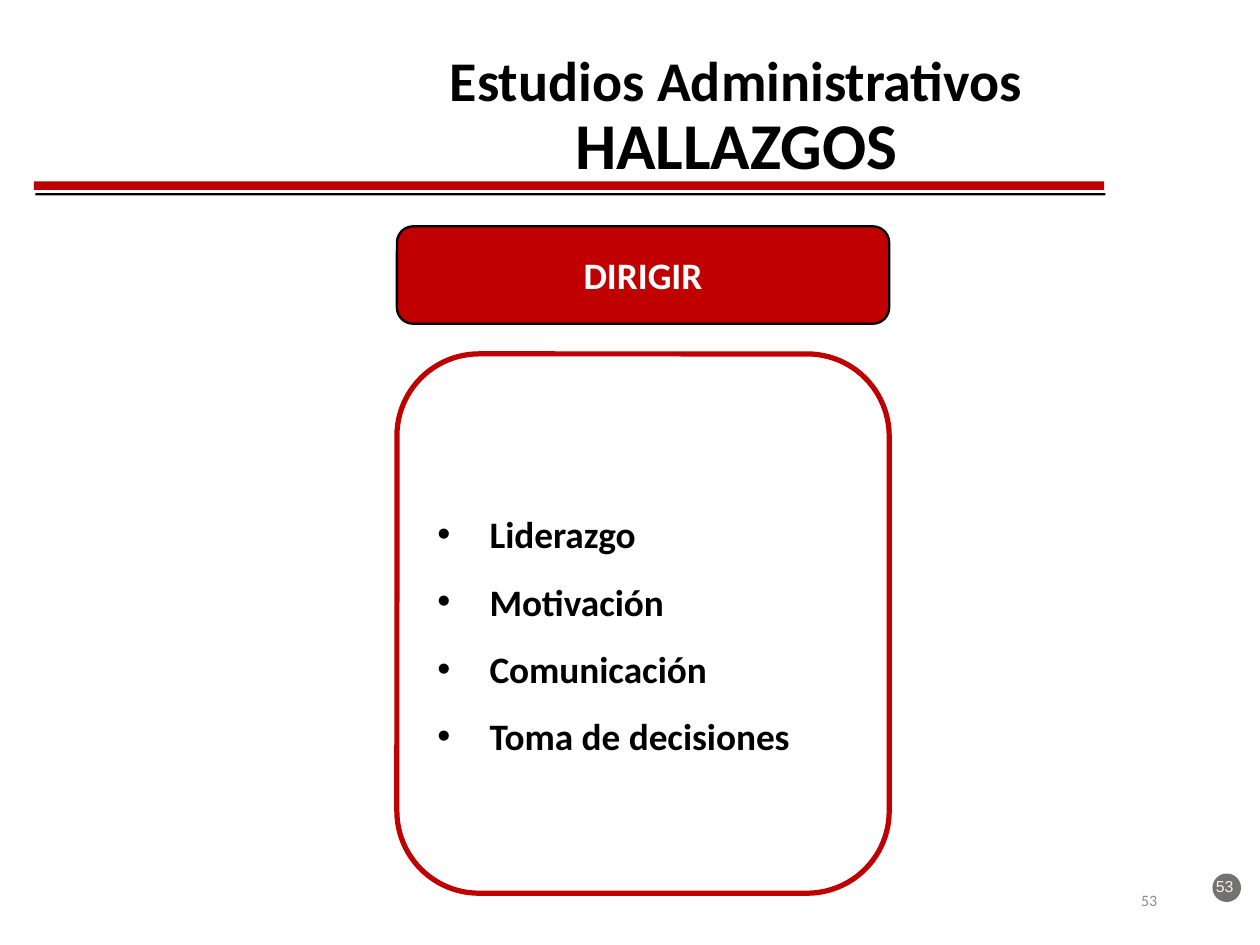
import pptx
import pptx.util
import pptx.dml.color
import pptx.enum.shapes
import pptx.enum.text
import pptx.oxml.xmlchemy
from dataclasses import dataclass

# Content
TITLE = [("Estudios Administrativos", 24), ("HALLAZGOS", 28)]
HEAD = "DIRIGIR"
ITEMS = ["Liderazgo", "Motivación", "Comunicación", "Toma de decisiones"]
PAGE = "53"


@dataclass
class Theme:
    font: str = "Calibri"
    alt: str = "Arial"
    red: str = "C00000"
    black: str = "000000"
    white: str = "FFFFFF"
    disc: str = "767171"
    pale: str = "F2F2F2"
    gray: str = "8C8C8C"
    text: float = 16
    small: float = 6.8


T = Theme()
WIDE = 7.5
HIGH = WIDE * 3 / 4

# Places: left, top, width, height in percent of the slide
COL, SPAN = 31.5, 39.07
SPOTS = {
    "disc": (96.23, 92.44, 2.27, 3.02),
    "badge": (95.2, 92.27, 4, 3.02),
    "title": (23.69, 2.84, 69.47, 19.38),
    "page": (70.63, 92.62, 22.53, 5.33),
    "head": (COL, 23.95, SPAN, 10.31),
    "list": (COL, 37.46, SPAN, 57.07),
}
RULES = [((2.7, 19.2, 84.93, 0.89), T.red),
         ((2.8, 20.44, 84.93, 0.25), T.black)]

KIND = pptx.enum.shapes.MSO_SHAPE
ALIGN = pptx.enum.text.PP_ALIGN
MID = pptx.enum.text.MSO_ANCHOR.MIDDLE
Inch = pptx.util.Inches


def place(spot):
    size = (WIDE, HIGH, WIDE, HIGH)
    return [Inch(part * full / 100) for part, full in zip(spot, size)]


def tint(code):
    return pptx.dml.color.RGBColor.from_string(code)


def style(font, size, color, bold=False, name=T.font):
    font.name, font.size, font.bold = name, pptx.util.Pt(size), bold
    font.color.rgb = tint(color)


def shape(kind, spot, fill, line=None, width=1):
    item = slide.shapes.add_shape(kind, *place(spot))
    item.shadow.inherit = False
    item.fill.solid()
    item.fill.fore_color.rgb = tint(fill)
    if line:
        item.line.color.rgb = tint(line)
        item.line.width = pptx.util.Pt(width)
    else:
        item.line.fill.background()
    item.text_frame.vertical_anchor = MID
    return item


def bullet(para):
    props = para._p.get_or_add_pPr()
    props.set("marL", str(Inch(0.31)))
    props.set("indent", str(Inch(-0.31)))
    for tag, key, value in (("buFont", "typeface", T.alt), ("buChar", "char", "•")):
        mark = pptx.oxml.xmlchemy.OxmlElement("a:" + tag)
        mark.set(key, value)
        props.append(mark)


def number(spot, align, color, name):
    frame = slide.shapes.add_textbox(*place(spot)).text_frame
    para = frame.paragraphs[0]
    para.text, para.alignment = PAGE, align
    style(para.font, T.small, color, name=name)
    return frame


deck = pptx.Presentation()
deck.slide_width, deck.slide_height = Inch(WIDE), Inch(HIGH)
slide = deck.slides.add_slide(deck.slide_layouts[5])

# Page badge and double rule
shape(KIND.OVAL, SPOTS["disc"], T.disc)
badge = number(SPOTS["badge"], ALIGN.CENTER, T.pale, T.alt)
badge.word_wrap = False
badge.margin_left = badge.margin_right = Inch(0.06)
badge.margin_top = badge.margin_bottom = Inch(0.03)
for spot, color in RULES:
    shape(KIND.RECTANGLE, spot, color)

# Title
title = slide.shapes.title
title.left, title.top, title.width, title.height = place(SPOTS["title"])
title.text_frame.vertical_anchor = MID
title.text_frame.auto_size = pptx.enum.text.MSO_AUTO_SIZE.NONE
para = title.text_frame.paragraphs[0]
para.alignment, para.line_spacing = ALIGN.CENTER, 0.9
for row, (words, size) in enumerate(TITLE):
    if row:
        para.add_line_break()
    run = para.add_run()
    run.text = words
    style(run.font, size, T.black, True)

# Page number
page = number(SPOTS["page"], ALIGN.RIGHT, T.gray, T.font)
page.word_wrap = True
page.vertical_anchor = MID

# Heading box
head = shape(KIND.ROUNDED_RECTANGLE, SPOTS["head"], T.red, T.black)
para = head.text_frame.paragraphs[0]
para.text, para.alignment = HEAD, ALIGN.CENTER
style(para.font, T.text, T.white, True)

# List box
box = shape(KIND.ROUNDED_RECTANGLE, SPOTS["list"], T.white, T.red, 2.25)
box.text_frame.text = "\n".join(ITEMS)
for para in box.text_frame.paragraphs:
    para.alignment, para.line_spacing = ALIGN.LEFT, 1.5
    bullet(para)
    style(para.font, T.text, T.black, True)

deck.save("out.pptx")
